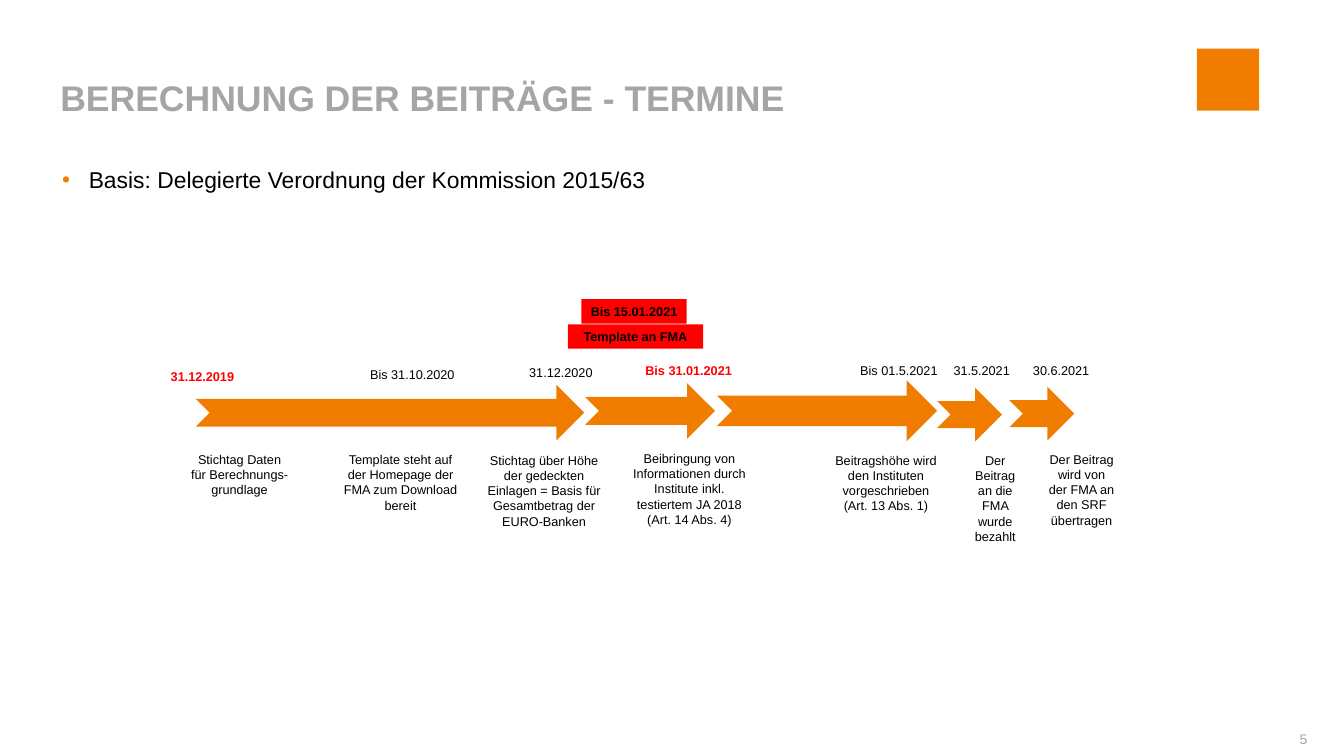
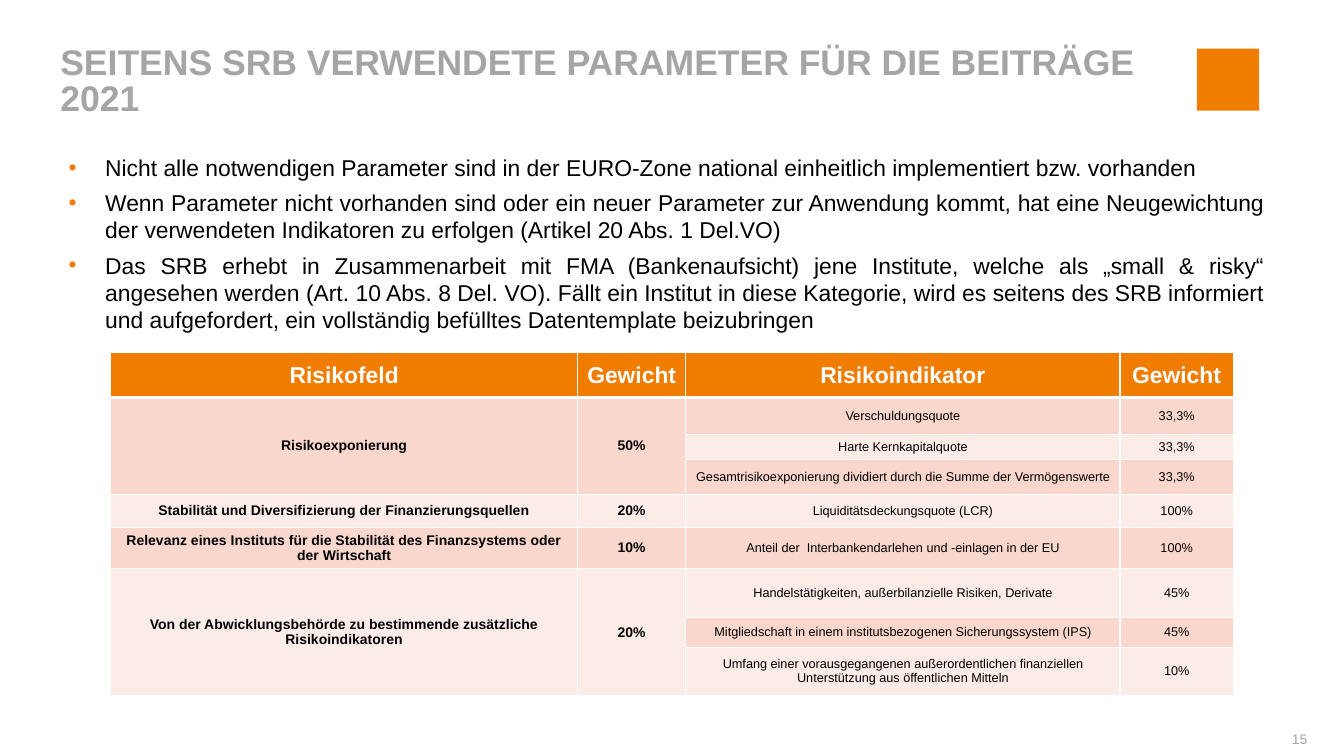
"""Build two slides on the dates and parameters of the resolution fund contributions."""
from dataclasses import dataclass
from typing import Any, NamedTuple

import lxml.etree
import pptx
import pptx.dml.color
import pptx.enum.shapes
import pptx.enum.text
import pptx.oxml.ns
import pptx.util

Pt = pptx.util.Pt
RGB = pptx.dml.color.RGBColor
qn = pptx.oxml.ns.qn
ALIGN = pptx.enum.text.PP_ALIGN
ANCHOR = pptx.enum.text.MSO_ANCHOR
PRESET = pptx.enum.shapes.MSO_SHAPE


@dataclass(frozen=True)
class Theme:
    font: str = "Arial"
    orange: str = "F07D00"
    grey: str = "A5A5A5"
    red: str = "FF0000"
    black: str = "000000"
    white: str = "FFFFFF"
    bands: tuple[str, str] = ("F9D7CC", "FCECE7")
    title: float = 28
    body: float = 18
    field: float = 11
    small: float = 10
    line: float = 12.1
    inset_x: float = 7.2
    inset_y: float = 3.6


THEME = Theme()


class Box(NamedTuple):
    left: float
    top: float
    width: float
    height: float


class Style(NamedTuple):
    size: float
    color: str = THEME.black
    bold: bool = False


class Date(NamedTuple):
    text: str
    left: float
    top: float
    width: float
    due: bool = False


class Step(NamedTuple):
    text: str
    left: float
    top: float
    width: float
    lines: int


class RiskField(NamedTuple):
    name: str
    weight: str
    indicators: list[tuple[str, str]]


SIZE = (1058.4, 595.44)
TITLE_BOX = Box(47.5, 36, 862.6, 57.6)
SQUARE_BOX = Box(942.5, 38.2, 49, 49)
NUMBER_BOX = Box(905, 575.3, 124.6, 13.7)
ROW_HEIGHT = THEME.line + 2 * THEME.inset_y

ARROWS = [
    Box(154.1, 303.1, 306, 43.9),
    Box(460.8, 301.7, 102.2, 43.9),
    Box(564.5, 299.5, 173.5, 48.2),
    Box(738, 305.3, 51.1, 42.5),
    Box(794.9, 304.6, 51.1, 42.5),
]
DATES = [
    Date("31.12.2019", 127.4, 287.3, 64.8, True),
    Date("Bis 31.10.2020", 284.4, 285.1, 81.4),
    Date("31.12.2020", 409.7, 283.7, 64.8),
    Date("Bis 31.01.2021", 501.1, 282.2, 82.8, True),
    Date("Bis 01.5.2021", 670.3, 282.2, 75.6),
    Date("31.5.2021", 743.8, 282.2, 59),
    Date("30.6.2021", 806.4, 282.2, 59),
]
DEADLINES = [
    Date("Bis 15.01.2021", 457.9, 235.6, 82.8),
    Date("Template an FMA", 447.1, 255.4, 106.6),
]
STEPS = [
    Step("Stichtag Daten für Berechnungs-grundlage", 143.3, 352.1, 90.7, 3),
    Step("Template steht auf der Homepage der FMA zum Download bereit", 262.1, 352.1, 106.6, 4),
    Step("Stichtag über Höhe der gedeckten Einlagen = Basis für Gesamtbetrag der EURO-Banken",
         375.1, 352.8, 106.6, 5),
    Step("Beibringung von Informationen durch Institute inkl. testiertem JA 2018 (Art. 14 Abs. 4)",
         488.9, 351.4, 108, 5),
    Step("Beitragshöhe wird den Instituten vorgeschrieben (Art. 13 Abs. 1)", 647.3, 352.8, 100.8, 4),
    Step("Der Beitrag an die FMA wurde bezahlt", 755.3, 352.8, 56.9, 6),
    Step("Der Beitrag wird von der FMA an den SRF übertragen", 817.9, 352.1, 67.7, 5),
]
PARAMETER_NOTES = [
    "Nicht alle notwendigen Parameter sind in der EURO-Zone national einheitlich implementiert "
    "bzw. vorhanden",
    "Wenn Parameter nicht vorhanden sind oder ein neuer Parameter zur Anwendung kommt, hat eine "
    "Neugewichtung der verwendeten Indikatoren zu erfolgen (Artikel 20 Abs. 1 Del.VO)",
    "Das SRB erhebt in Zusammenarbeit mit FMA (Bankenaufsicht) jene Institute, welche als "
    "„small & risky“ angesehen werden (Art. 10 Abs. 8 Del. VO). Fällt ein Institut in diese "
    "Kategorie, wird es seitens des SRB informiert und aufgefordert, ein vollständig befülltes "
    "Datentemplate beizubringen",
]
RISK_HEADER = ["Risikofeld", "Gewicht", "Risikoindikator", "Gewicht"]
RISK_FIELDS = [
    RiskField("Risikoexponierung", "50%", [
        ("Verschuldungsquote", "33,3%"),
        ("Harte Kernkapitalquote", "33,3%"),
        ("Gesamtrisikoexponierung dividiert durch die Summe der Vermögenswerte", "33,3%"),
    ]),
    RiskField("Stabilität und Diversifizierung der Finanzierungsquellen", "20%", [
        ("Liquiditätsdeckungsquote (LCR)", "100%"),
    ]),
    RiskField("Relevanz eines Instituts für die Stabilität des Finanzsystems oder der Wirtschaft",
              "10%", [("Anteil der  Interbankendarlehen und -einlagen in der EU", "100%")]),
    RiskField("Von der Abwicklungsbehörde zu bestimmende zusätzliche Risikoindikatoren", "20%", [
        ("Handelstätigkeiten, außerbilanzielle Risiken, Derivate", "45%"),
        ("Mitgliedschaft in einem institutsbezogenen Sicherungssystem (IPS)", "45%"),
        ("Umfang einer vorausgegangenen außerordentlichen finanziellen Unterstützung aus "
         "öffentlichen Mitteln", "10%"),
    ]),
]
RISK_COLUMNS = [367.9, 85, 342, 89.3]
RISK_ROWS = [35.3, 28.8, 20.2, 27.4, 25.9, 32.4, 38.2, 23.8, 38.2]


def lengths(box: Box) -> list[pptx.util.Length]:
    return [Pt(value) for value in box]


def write(paragraph: Any, text: str, style: Style, align: Any) -> None:
    paragraph.alignment = align
    run = paragraph.add_run()
    run.text = text
    run.font.name = THEME.font
    run.font.size = Pt(style.size)
    run.font.bold = style.bold
    run.font.color.rgb = RGB.from_string(style.color)


def set_frame(frame: Any, anchor: Any, inset_x: float = 0, inset_y: float = 0,
              wrap: bool = True) -> None:
    frame.auto_size = pptx.enum.text.MSO_AUTO_SIZE.NONE
    frame.word_wrap = wrap
    frame.vertical_anchor = anchor
    frame.margin_left = frame.margin_right = Pt(inset_x)
    frame.margin_top = frame.margin_bottom = Pt(inset_y)


def place(placeholder: Any, box: Box) -> None:
    placeholder.left, placeholder.top, placeholder.width, placeholder.height = lengths(box)


def add_plain(shapes: Any, preset: Any, box: Box, color: str) -> Any:
    shape = shapes.add_shape(preset, *lengths(box))
    shape.shadow.inherit = False
    shape.fill.solid()
    shape.fill.fore_color.rgb = RGB.from_string(color)
    shape.line.fill.background()
    return shape


def add_label(shapes: Any, text: str, box: Box, style: Style, align: Any,
              wrap: bool = True) -> None:
    label = shapes.add_textbox(*lengths(box))
    set_frame(label.text_frame, ANCHOR.TOP, THEME.inset_x, THEME.inset_y, wrap)
    write(label.text_frame.paragraphs[0], text, style, align)


def start_slide(deck: Any, title: str, number: str) -> Any:
    slide = deck.slides.add_slide(deck.slide_layouts[1])
    add_plain(slide.shapes, PRESET.RECTANGLE, SQUARE_BOX, THEME.orange)
    heading = slide.shapes.title
    place(heading, TITLE_BOX)
    set_frame(heading.text_frame, ANCHOR.BOTTOM)
    heading_line = heading.text_frame.paragraphs[0]
    heading_line.line_spacing = 0.85
    write(heading_line, title, Style(THEME.title, THEME.grey, True), ALIGN.LEFT)
    page = slide.shapes.add_textbox(*lengths(NUMBER_BOX))
    set_frame(page.text_frame, ANCHOR.MIDDLE)
    write(page.text_frame.paragraphs[0], number, Style(THEME.field, THEME.grey), ALIGN.RIGHT)
    return slide


def fill_list(slide: Any, points: list[str], box: Box, indent: float, align: Any) -> None:
    body = slide.placeholders[1]
    place(body, box)
    set_frame(body.text_frame, ANCHOR.TOP)
    for index, point in enumerate(points):
        paragraph = body.text_frame.add_paragraph() if index else body.text_frame.paragraphs[0]
        properties = paragraph._p.get_or_add_pPr()
        properties.set("marL", str(Pt(indent)))
        properties.set("indent", str(-Pt(indent)))
        color = lxml.etree.SubElement(properties, qn("a:buClr"))
        lxml.etree.SubElement(color, qn("a:srgbClr"), val=THEME.orange)
        lxml.etree.SubElement(properties, qn("a:buFont"), typeface=THEME.font)
        lxml.etree.SubElement(properties, qn("a:buChar"), char="•")
        paragraph.space_before = Pt(6 if index else 0)
        write(paragraph, point, Style(THEME.body), align)


def add_timeline(slide: Any) -> None:
    timeline = slide.shapes.add_group_shape().shapes
    for arrow in ARROWS:
        add_plain(timeline, PRESET.NOTCHED_RIGHT_ARROW, arrow, THEME.orange)
    for date in DATES:
        style = Style(THEME.small, THEME.red if date.due else THEME.black, date.due)
        add_label(timeline, date.text, Box(date.left, date.top, date.width, ROW_HEIGHT),
                  style, ALIGN.LEFT, wrap=False)
    for deadline in DEADLINES:
        flag = add_plain(timeline, PRESET.RECTANGLE,
                         Box(deadline.left, deadline.top, deadline.width, ROW_HEIGHT), THEME.red)
        set_frame(flag.text_frame, ANCHOR.TOP, THEME.inset_x, THEME.inset_y, wrap=False)
        write(flag.text_frame.paragraphs[0], deadline.text,
              Style(THEME.small, bold=True), ALIGN.CENTER)
    for step in STEPS:
        height = step.lines * THEME.line + 2 * THEME.inset_y
        add_label(timeline, step.text, Box(step.left, step.top, step.width, height),
                  Style(THEME.small), ALIGN.CENTER)


def format_cell(cell: Any, row: int) -> None:
    properties = cell._tc.get_or_add_tcPr()
    heavy_side = {0: "a:lnB", 1: "a:lnT"}.get(row)
    for side in ("a:lnL", "a:lnR", "a:lnT", "a:lnB"):
        width = Pt(3 if side == heavy_side else 1)
        border = lxml.etree.SubElement(properties, qn(side), w=str(width))
        paint = lxml.etree.SubElement(border, qn("a:solidFill"))
        lxml.etree.SubElement(paint, qn("a:srgbClr"), val=THEME.white)
    cell.fill.solid()
    color = THEME.bands[(row - 1) % 2] if row else THEME.orange
    cell.fill.fore_color.rgb = RGB.from_string(color)
    cell.vertical_anchor = ANCHOR.MIDDLE


def add_risk_table(slide: Any) -> None:
    box = Box(87.1, 277.9, sum(RISK_COLUMNS), sum(RISK_ROWS))
    table = slide.shapes.add_table(len(RISK_ROWS), len(RISK_COLUMNS), *lengths(box)).table
    for column, width in zip(table.columns, RISK_COLUMNS):
        column.width = Pt(width)
    for row, (line, height) in enumerate(zip(table.rows, RISK_ROWS)):
        line.height = Pt(height)
        for cell in line.cells:
            format_cell(cell, row)

    def put(row: int, column: int, text: str, style: Style) -> None:
        write(table.cell(row, column).text_frame.paragraphs[0], text, style, ALIGN.CENTER)

    for column, heading in enumerate(RISK_HEADER):
        put(0, column, heading, Style(THEME.body, THEME.white, True))
    first = 1
    for risk in RISK_FIELDS:
        last = first + len(risk.indicators) - 1
        for column, text in enumerate((risk.name, risk.weight)):
            if last > first:
                table.cell(first, column).merge(table.cell(last, column))
            put(first, column, text, Style(THEME.field, bold=True))
        for row, indicator in enumerate(risk.indicators, first):
            for column, text in enumerate(indicator, 2):
                put(row, column, text, Style(THEME.small))
        first = last + 1


def main() -> None:
    deck = pptx.Presentation()
    deck.slide_width, deck.slide_height = Pt(SIZE[0]), Pt(SIZE[1])

    dates = start_slide(deck, "BERECHNUNG DER BEITRÄGE - TERMINE", "5")
    fill_list(dates, ["Basis: Delegierte Verordnung der Kommission 2015/63"],
              Box(49, 130.3, 480, 22), 20.9, ALIGN.LEFT)
    add_timeline(dates)

    parameters = start_slide(deck, "SEITENS SRB VERWENDETE PARAMETER FÜR DIE BEITRÄGE 2021", "15")
    fill_list(parameters, PARAMETER_NOTES, Box(54, 121, 941.8, 150), 28.8, ALIGN.JUSTIFY)
    add_risk_table(parameters)

    deck.save("out.pptx")


if __name__ == "__main__":
    main()
